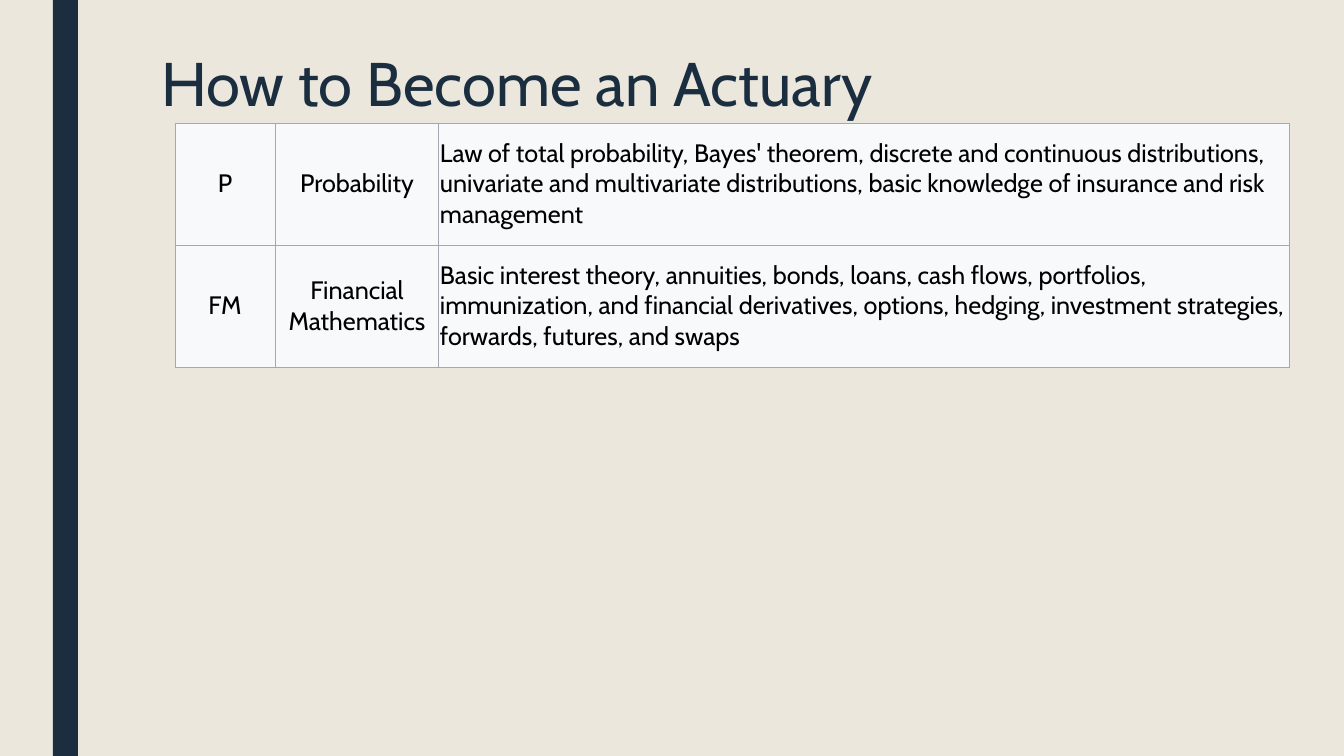
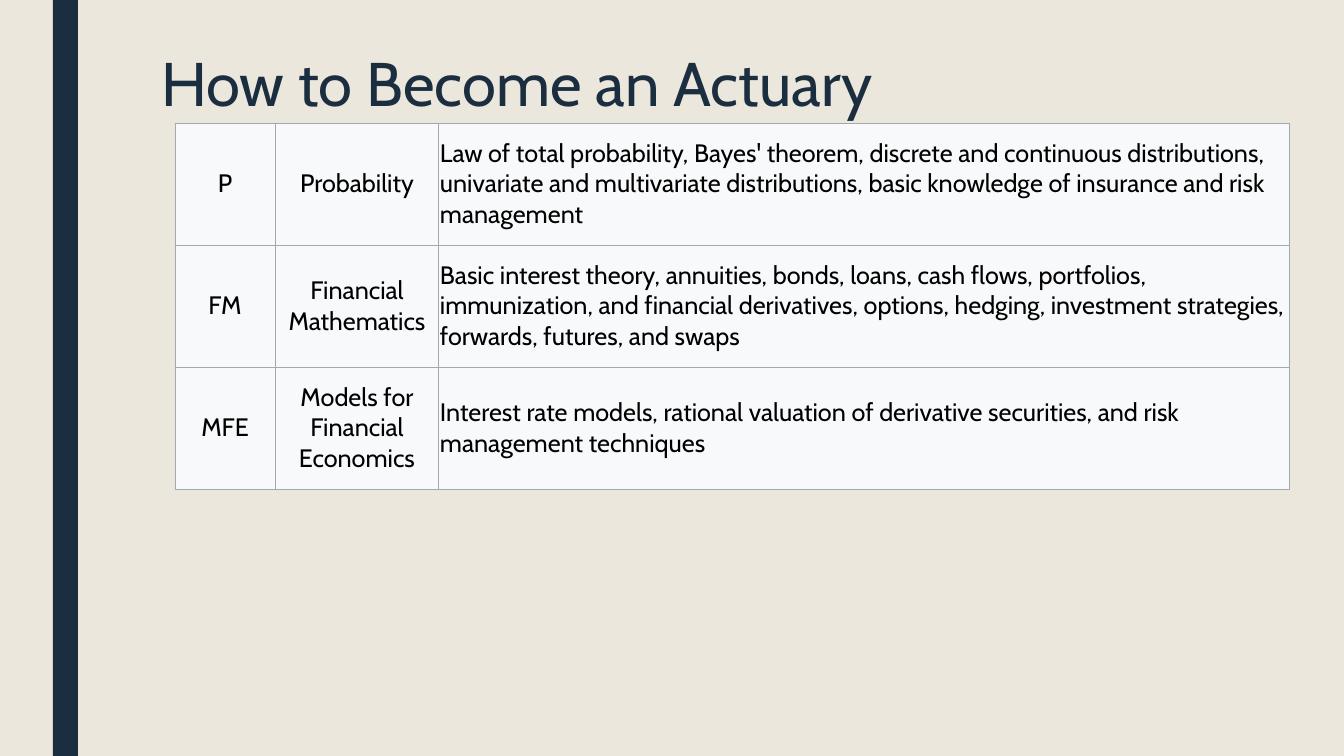
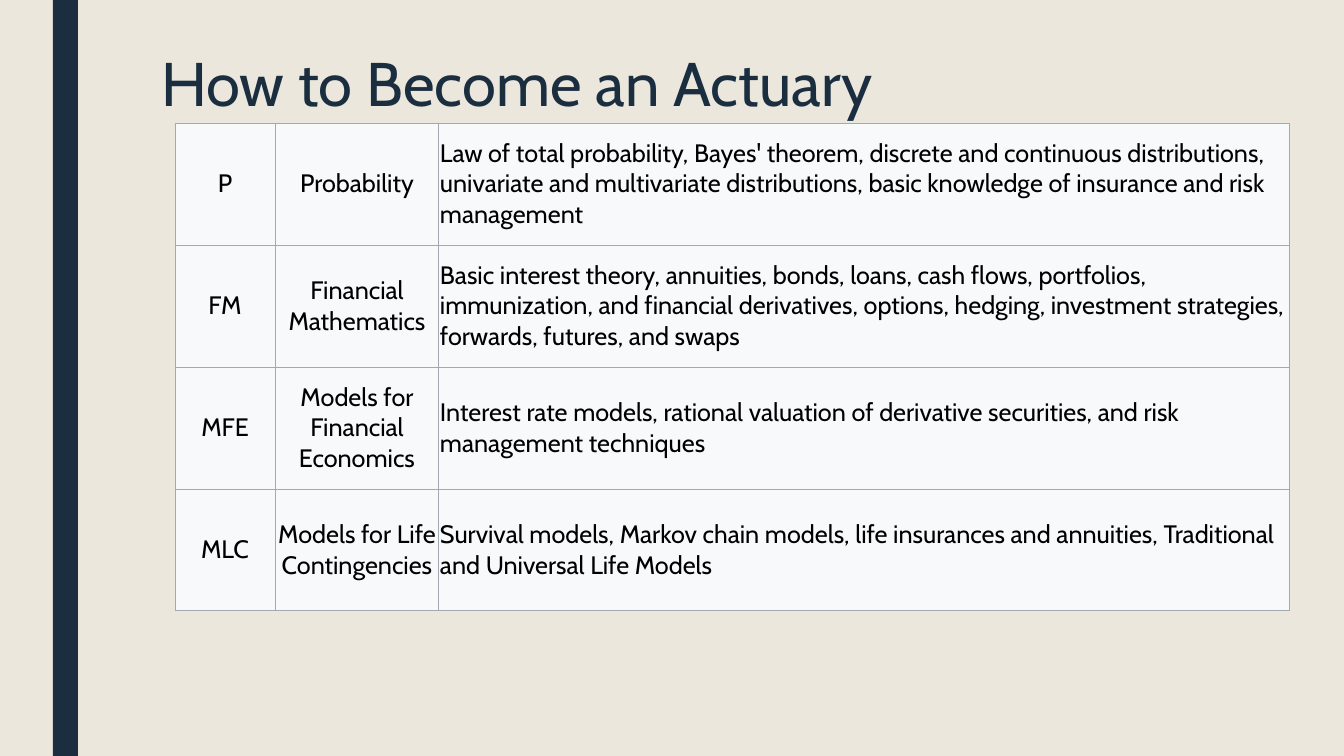
import lxml.etree
import pptx
import pptx.dml.color
import pptx.enum.text
import pptx.oxml.ns
import pptx.util

PX = pptx.util.Inches(7.5) / 756
SLIDE_W, SLIDE_H = 1344, 756
FONT = "Cabin"
COLORS = {
    "background": "EBE7DD",
    "navy": "1A2E40",
    "cell": "F8F9FA",
    "border": "A2A9B1",
    "text": "000000",
}

TITLE = "How to Become an Actuary"
BAND_BOX = (53, 0, 25, SLIDE_H)
TITLE_BOX = (151, 49, 1058, 163)
TABLE_BOX = (175, 123, 1115, 122)
CODE_W, NAME_W = 100, 164
EXAMS = [
    ("P", "Probability",
     "Law of total probability, Bayes' theorem, discrete and continuous distributions, "
     "univariate and multivariate distributions, basic knowledge of insurance and risk management"),
    ("FM", "Financial Mathematics",
     "Basic interest theory, annuities, bonds, loans, cash flows, portfolios, immunization, "
     "and financial derivatives, options, hedging, investment strategies, forwards, futures, and swaps"),
    ("MFE", "Models for Financial Economics",
     "Interest rate models, rational valuation of derivative securities, and risk management techniques"),
    ("MLC", "Models for Life Contingencies",
     "Survival models, Markov chain models, life insurances and annuities, "
     "Traditional and Universal Life Models"),
]


def px(n):
    return pptx.util.Emu(round(n * PX))


def rgb(name):
    return pptx.dml.color.RGBColor.from_string(COLORS[name])


def paint(fill, name):
    fill.solid()
    fill.fore_color.rgb = rgb(name)


def style_text(p, size, color, align):
    p.alignment = align
    for r in p.runs:
        r.font.name = FONT
        r.font.size = pptx.util.Pt(size)
        r.font.color.rgb = rgb(color)


def add_band(s, box):
    band = s.shapes.add_shape(pptx.enum.shapes.MSO_SHAPE.RECTANGLE, *map(px, box))
    band.shadow.inherit = False
    paint(band.fill, "navy")
    band.line.fill.background()


def add_title(s, box, text):
    sp = s.shapes.title
    sp.left, sp.top, sp.width, sp.height = map(px, box)
    tf = sp.text_frame
    tf.text = text
    tf.word_wrap = True
    tf.auto_size = pptx.enum.text.MSO_AUTO_SIZE.NONE
    tf.vertical_anchor = pptx.enum.text.MSO_ANCHOR.TOP
    p = tf.paragraphs[0]
    p.line_spacing = 0.89
    style_text(p, 44, "navy", pptx.enum.text.PP_ALIGN.LEFT)


def add_borders(cell):
    tc_pr = cell._tc.get_or_add_tcPr()
    qn = pptx.oxml.ns.qn
    for side in ("a:lnL", "a:lnR", "a:lnT", "a:lnB"):
        ln = lxml.etree.SubElement(tc_pr, qn(side), w=str(pptx.util.Pt(0.75)))
        fill = lxml.etree.SubElement(ln, qn("a:solidFill"))
        lxml.etree.SubElement(fill, qn("a:srgbClr"), val=COLORS["border"])


def format_cell(cell, text, align):
    cell.text = text
    cell.vertical_anchor = pptx.enum.text.MSO_ANCHOR.MIDDLE
    cell.margin_left = cell.margin_right = px(1)
    cell.margin_top = cell.margin_bottom = 0
    add_borders(cell)
    paint(cell.fill, "cell")
    style_text(cell.text_frame.paragraphs[0], 18, "text", align)


def add_exam_table(s, box, exams):
    left, top, width, row_h = box
    table = s.shapes.add_table(
        len(exams), 3, px(left), px(top), px(width), px(row_h * len(exams))).table
    table.first_row = table.horz_banding = False
    for column, w in zip(table.columns, (CODE_W, NAME_W, width - CODE_W - NAME_W)):
        column.width = px(w)
    center, start = pptx.enum.text.PP_ALIGN.CENTER, pptx.enum.text.PP_ALIGN.LEFT
    for row, exam in zip(table.rows, exams):
        row.height = px(row_h)
        for cell, text, align in zip(row.cells, exam, (center, center, start)):
            format_cell(cell, text, align)


def add_exam_slide(prs, exams):
    s = prs.slides.add_slide(prs.slide_layouts[5])
    add_band(s, BAND_BOX)
    add_title(s, TITLE_BOX, TITLE)
    add_exam_table(s, TABLE_BOX, exams)


def main():
    prs = pptx.Presentation()
    prs.slide_width, prs.slide_height = px(SLIDE_W), px(SLIDE_H)
    paint(prs.slide_master.background.fill, "background")
    for count in (2, 3, 4):
        add_exam_slide(prs, EXAMS[:count])
    prs.save("out.pptx")


if __name__ == "__main__":
    import pptx.enum.shapes
    main()
